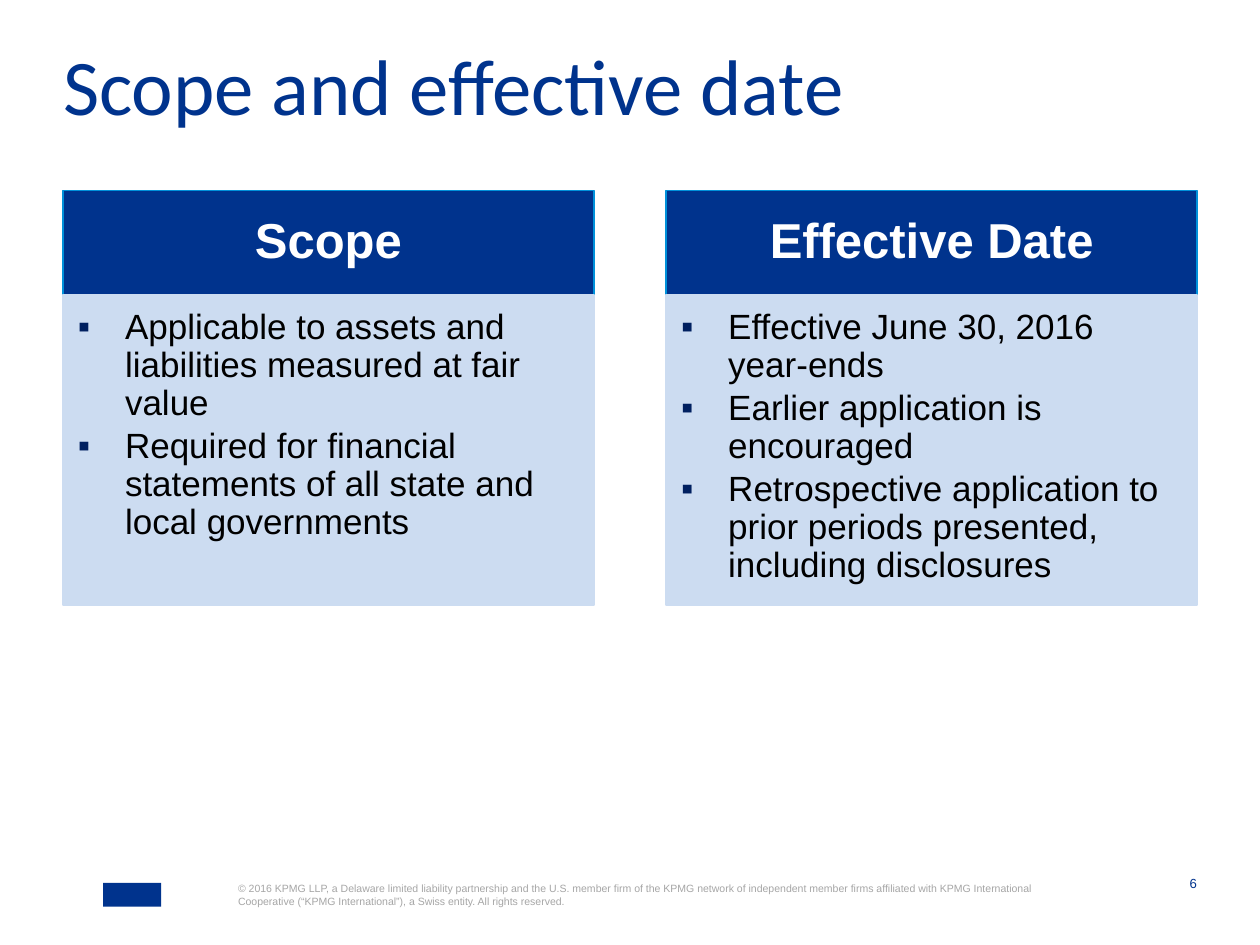
from lxml import etree
from pptx import Presentation
from pptx.dml.color import RGBColor
from pptx.enum.shapes import MSO_SHAPE
from pptx.enum.text import MSO_ANCHOR, MSO_AUTO_SIZE, PP_ALIGN
from pptx.oxml.ns import qn
from pptx.util import Cm, Pt

NAVY = RGBColor(0x00, 0x33, 0x8D)
BRIGHT_BLUE = RGBColor(0x00, 0x91, 0xDA)
PALE_BLUE = RGBColor(0xCC, 0xDC, 0xF1)
BULLET_BLUE = RGBColor(0x00, 0x20, 0x60)
GREY = RGBColor(0xA6, 0xA6, 0xA6)
WHITE = RGBColor(0xFF, 0xFF, 0xFF)
BLACK = RGBColor(0x00, 0x00, 0x00)
TOP, MIDDLE, BOTTOM = MSO_ANCHOR.TOP, MSO_ANCHOR.MIDDLE, MSO_ANCHOR.BOTTOM
LEFT, CENTER, RIGHT = PP_ALIGN.LEFT, PP_ALIGN.CENTER, PP_ALIGN.RIGHT
NO_AUTOFIT = MSO_AUTO_SIZE.NONE
RECTANGLE = MSO_SHAPE.RECTANGLE

MARGIN = 1.27
COLUMN_WIDTH = 10.7
COLUMN_STEP = 12.16
HEADER_TOP, HEADER_HEIGHT = 3.84, 2.1
LIST_HEIGHT = 6.25

COLUMNS = [
    ("Scope", [
        "Applicable to assets and liabilities measured at fair value",
        "Required for financial statements of all state and local governments",
    ]),
    ("Effective Date", [
        "Effective June 30, 2016 year-ends",
        "Earlier application is encouraged",
        "Retrospective application to prior periods presented, including disclosures",
    ]),
]
COPYRIGHT = (
    "© 2016 KPMG LLP, a Delaware limited liability partnership and the U.S. member "
    "firm of the KPMG network of independent member firms affiliated with KPMG "
    "International Cooperative (“KPMG International”), a Swiss entity. "
    "All rights reserved."
)


def place(shape, left, top, width, height, insets=(0, 0, 0, 0), anchor=TOP):
    shape.left, shape.top = Cm(left), Cm(top)
    shape.width, shape.height = Cm(width), Cm(height)
    frame = shape.text_frame
    frame.word_wrap = True
    frame.auto_size = NO_AUTOFIT
    frame.vertical_anchor = anchor
    (frame.margin_left, frame.margin_top,
     frame.margin_right, frame.margin_bottom) = map(Cm, insets)


def style(paragraph, size, color, font="Arial", bold=False, align=LEFT,
          spacing=1.0, after=0):
    paragraph.alignment = align
    paragraph.line_spacing = spacing
    paragraph.space_before = Pt(0)
    paragraph.space_after = Pt(after)
    for run in paragraph.runs:
        run.font.name = font
        run.font.size = Pt(size)
        run.font.bold = bold
        run.font.color.rgb = color


prs = Presentation()
prs.slide_width, prs.slide_height = Cm(25.4), Cm(19.05)
slide = prs.slides.add_slide(prs.slide_layouts.get_by_name("Comparison"))

# Title
title = slide.shapes.title
title.text_frame.text = "Scope and effective date"
place(title, MARGIN, 1.27, 22.86, 1.78)
style(title.text_frame.paragraphs[0], 45, NAVY, font="Calibri", spacing=0.7)

# Two columns: a heading over a bulleted list
for column, (heading, points) in enumerate(COLUMNS):
    left = MARGIN + column * COLUMN_STEP
    header = slide.placeholders[1 + 2 * column]
    panel = slide.placeholders[2 + 2 * column]

    header.text_frame.text = heading
    place(header, left, HEADER_TOP, COLUMN_WIDTH, HEADER_HEIGHT,
          (0.56, 0.3, 0.56, 0.3), MIDDLE)
    style(header.text_frame.paragraphs[0], 28, WHITE, bold=True, align=CENTER,
          spacing=0.9)

    panel.text_frame.text = "\n".join(points)
    place(panel, left, HEADER_TOP + HEADER_HEIGHT, COLUMN_WIDTH, LIST_HEIGHT,
          (0.3, 0.3, 0.4, 0.43))
    for point in panel.text_frame.paragraphs:
        properties = point._p.get_or_add_pPr()
        properties.set("marL", str(Cm(0.95)))
        properties.set("indent", str(-Cm(0.95)))
        bullet_color = etree.SubElement(properties, qn("a:buClr"))
        etree.SubElement(bullet_color, qn("a:srgbClr"), val=str(BULLET_BLUE))
        etree.SubElement(properties, qn("a:buChar"), char="▪")
        style(point, 20, BLACK, spacing=0.9, after=3)

    for box, fill, outline in ((header, NAVY, BRIGHT_BLUE),
                               (panel, PALE_BLUE, PALE_BLUE)):
        box.fill.solid()
        box.fill.fore_color.rgb = fill
        box.line.color.rgb = outline
        box.line.width = Pt(1)

# Footer: plain mark, copyright line and page number
mark = slide.shapes.add_shape(RECTANGLE, Cm(2.08), Cm(17.8), Cm(1.17), Cm(0.48))
mark.shadow.inherit = False
mark.fill.solid()
mark.fill.fore_color.rgb = NAVY
mark.line.fill.background()

for text, bounds, anchor, size, color, align in (
    (COPYRIGHT, (4.8, 17.78, 16.15, 0.69), TOP, 6, GREY, LEFT),
    ("6", (20.8, 17.55, 3.33, 0.41), BOTTOM, 7.5, NAVY, RIGHT),
):
    note = slide.shapes.add_textbox(0, 0, 0, 0)
    note.text_frame.text = text
    place(note, *bounds, anchor=anchor)
    style(note.text_frame.paragraphs[0], size, color, align=align)

prs.save("out.pptx")
